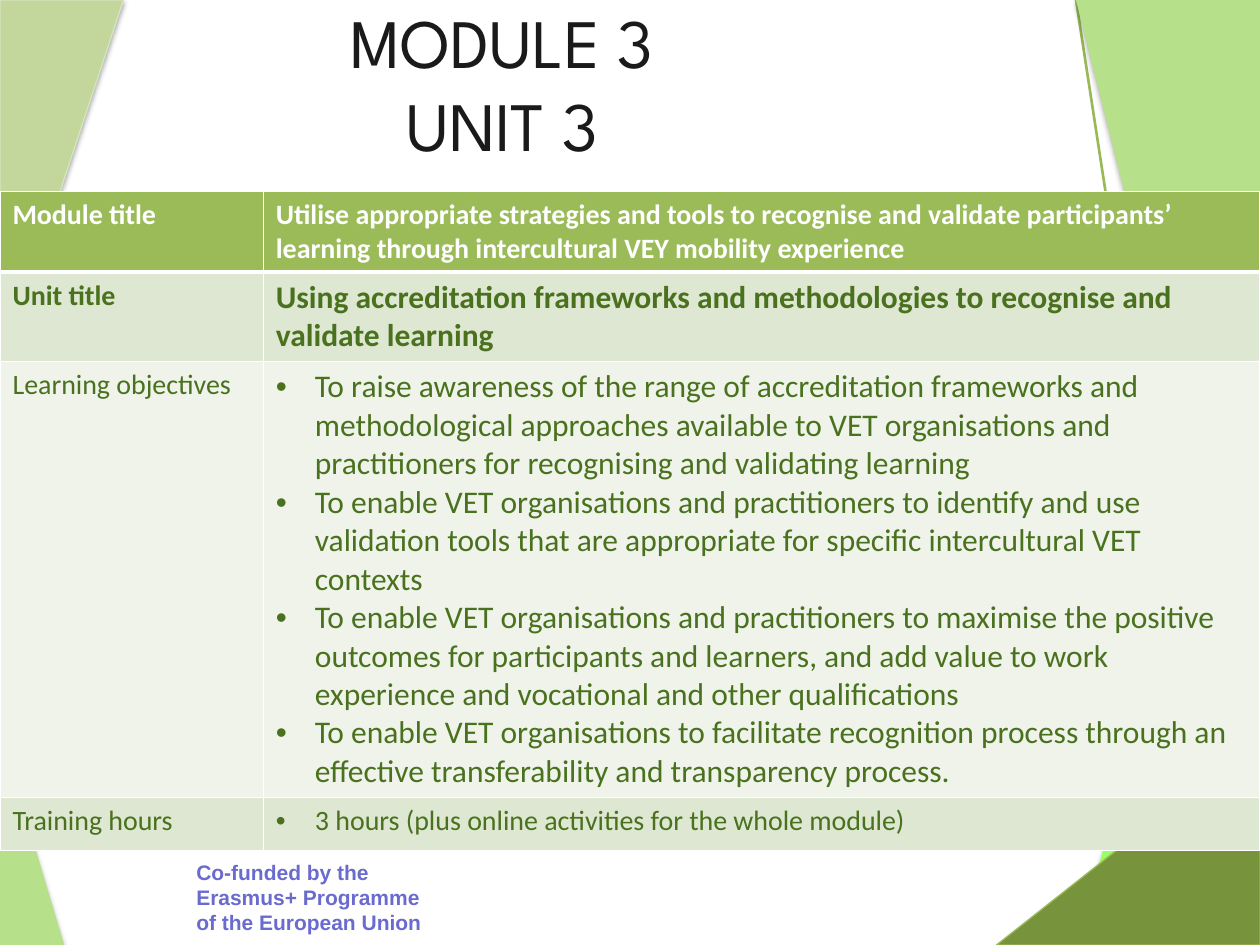
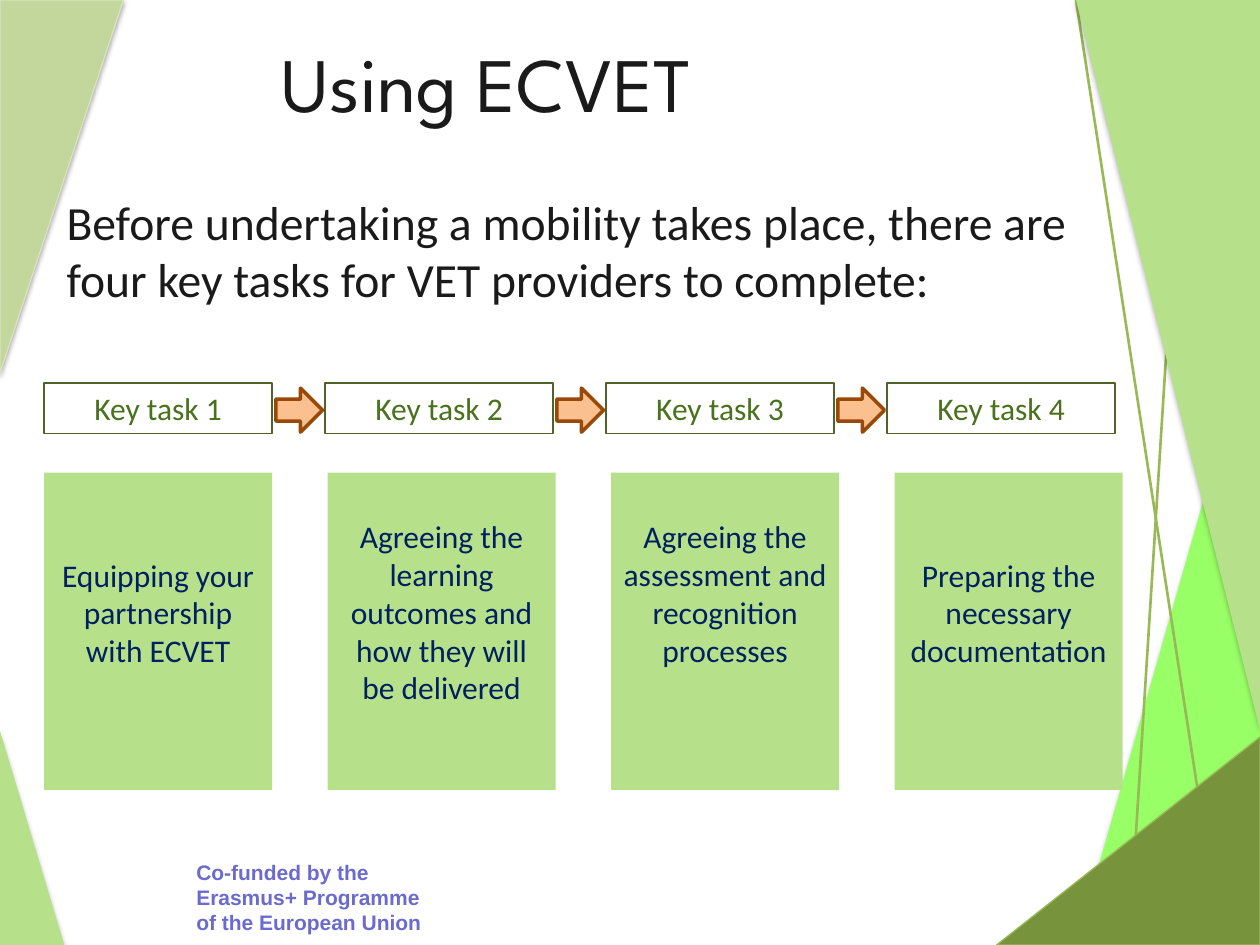
from dataclasses import dataclass

from lxml.etree import SubElement
from pptx import Presentation
from pptx.dml.color import RGBColor
from pptx.enum.shapes import MSO_CONNECTOR, MSO_SHAPE as Preset
from pptx.enum.text import MSO_ANCHOR as Anchor, PP_ALIGN as Align
from pptx.oxml.ns import qn
from pptx.util import Emu, Inches, Pt

# Slide grid: 100 columns by 75 rows
SLIDE_W, SLIDE_H = Inches(10), Inches(7.5)
COLUMN, ROW = SLIDE_W // 100, SLIDE_H // 75

# Colours
WHITE = RGBColor(0xFF, 0xFF, 0xFF)
INK = RGBColor(0x1A, 0x1A, 0x1A)
NAVY = RGBColor(0x00, 0x20, 0x60)
FOOTER_BLUE = RGBColor(0x6B, 0x6B, 0xCF)
LEAF = RGBColor(0xB7, 0xE0, 0x8B)
LIME = RGBColor(0x99, 0xFF, 0x66)
SAGE = RGBColor(0xC3, 0xD6, 0x9B)
SAGE_EDGE = RGBColor(0xD7, 0xE4, 0xBD)
OLIVE = RGBColor(0x77, 0x93, 0x3C)
STEM = RGBColor(0x98, 0xB9, 0x55)
FOREST = RGBColor(0x49, 0x71, 0x1E)
LABEL_EDGE = RGBColor(0x4F, 0x62, 0x28)
HEADER_GREEN = RGBColor(0x9B, 0xBB, 0x59)
BAND_DARK = RGBColor(0xDE, 0xE7, 0xD1)
BAND_LIGHT = RGBColor(0xEF, 0xF3, 0xEA)
PEACH = RGBColor(0xFA, 0xC0, 0x90)
RUST = RGBColor(0x98, 0x48, 0x07)


@dataclass(frozen=True)
class Area:
    """A place on the grid, in columns and rows."""
    left: float
    top: float
    width: float
    height: float

    def emu(self) -> tuple:
        return (Emu(round(self.left * COLUMN)), Emu(round(self.top * ROW)),
                Emu(round(self.width * COLUMN)), Emu(round(self.height * ROW)))


@dataclass(frozen=True)
class TextStyle:
    size: float
    color: RGBColor
    font: str = "Calibri"
    bold: bool = False
    align: Align = Align.LEFT


@dataclass(frozen=True)
class Facet:
    """A right triangle of the background."""
    area: Area
    fill: RGBColor
    edge: RGBColor | None = None
    flips: tuple = ()


@dataclass(frozen=True)
class Task:
    text: str
    lines_above: int


@dataclass(frozen=True)
class UnitRow:
    heading: str
    content: tuple
    height: float
    fill: RGBColor
    heading_style: TextStyle
    content_style: TextStyle
    bulleted: bool = False


FOOTER = TextStyle(12, FOOTER_BLUE, "Arial", True)
INTRO = TextStyle(27.2, INK)
LABEL = TextStyle(18, FOREST, align=Align.CENTER)
CARD = TextStyle(18, NAVY, align=Align.CENTER)
HEADER = TextStyle(16, WHITE, bold=True)
CELL = TextStyle(16, FOREST)
CELL_BOLD = TextStyle(16, FOREST, bold=True)
CELL_LARGE = TextStyle(18, FOREST)
CELL_LARGE_BOLD = TextStyle(18, FOREST, bold=True)

BACK_FACET = Facet(Area(85.4, 24.1, 14.6, 50.9), LIME, flips=("flipH",))
FRONT_FACETS = (
    Facet(Area(0, 58, 5.1, 17), LEAF),
    Facet(Area(0, 0, 9.8, 29.6), SAGE, SAGE_EDGE, ("flipV",)),
)
STEMS = ((89.6, 75, 93, 21), (96.5, 72.1, 85.4, 0))
TOP_FACETS = (
    Facet(Area(85.4, 0, 14.6, 57.9), LEAF, flips=("flipH", "flipV")),
    Facet(Area(79.1, 58.5, 20.9, 16.5), OLIVE, STEM, ("flipH",)),
)

UNIT_ROWS = (
    UnitRow("Module title",
            ("Utilise appropriate strategies and tools to recognise and validate "
             "participants’ learning through intercultural VEY mobility experience",),
            6.4, HEADER_GREEN, HEADER, HEADER),
    UnitRow("Unit title",
            ("Using accreditation frameworks and methodologies to recognise and "
             "validate learning",),
            7.1, BAND_DARK, CELL_BOLD, CELL_LARGE_BOLD),
    UnitRow("Learning objectives",
            ("To raise awareness of the range of accreditation frameworks and "
             "methodological approaches available to VET organisations and "
             "practitioners for recognising and validating learning",
             "To enable VET organisations and practitioners to identify and use "
             "validation tools that are appropriate for specific intercultural VET "
             "contexts",
             "To enable VET organisations and practitioners to maximise the positive "
             "outcomes for participants and learners, and add value to work "
             "experience and vocational and other qualifications",
             "To enable VET organisations to facilitate recognition process through "
             "an effective transferability and transparency process."),
            34.6, BAND_LIGHT, CELL, CELL_LARGE, True),
    UnitRow("Training hours",
            ("3 hours (plus online activities for the whole module)",),
            4.2, BAND_DARK, CELL, CELL, True),
)

TASKS = (
    Task("Equipping your partnership with ECVET", 2),
    Task("Agreeing the learning outcomes and how they will be delivered", 1),
    Task("Agreeing the assessment and recognition processes", 1),
    Task("Preparing the necessary documentation", 2),
)


# Text
def add_run(paragraph, text: str, style: TextStyle) -> None:
    paragraph.alignment = style.align
    run = paragraph.add_run()
    run.text = text
    run.font.name = style.font
    run.font.size = Pt(style.size)
    run.font.bold = style.bold
    run.font.color.rgb = style.color


def add_bullet(paragraph) -> None:
    properties = paragraph._p.get_or_add_pPr()
    properties.set("marL", str(Inches(0.31)))
    properties.set("indent", str(-Inches(0.31)))
    SubElement(properties, qn("a:buFont"), typeface="Arial")
    SubElement(properties, qn("a:buChar"), char="•")


def add_text(slide, area: Area, lines: tuple, style: TextStyle,
             anchor: Anchor = Anchor.TOP) -> None:
    frame = slide.shapes.add_textbox(*area.emu()).text_frame
    frame.word_wrap = True
    frame.vertical_anchor = anchor
    paragraph = frame.paragraphs[0]
    for number, line in enumerate(lines):
        if number:
            paragraph.add_line_break()
        add_run(paragraph, line, style)


# Shapes
def add_block(slide, preset: Preset, area: Area, fill: RGBColor | None = None,
              edge: RGBColor | None = None, edge_width: float = 0.75):
    block = slide.shapes.add_shape(preset, *area.emu())
    block.shadow.inherit = False
    if fill is None:
        block.fill.background()
    else:
        block.fill.solid()
        block.fill.fore_color.rgb = fill
    if edge is None:
        block.line.fill.background()
    else:
        block.line.color.rgb = edge
        block.line.width = Pt(edge_width)
    return block


def add_text_block(slide, area: Area, text: str, style: TextStyle,
                   fill: RGBColor | None = None, edge: RGBColor | None = None,
                   lines_above: int = 0) -> None:
    frame = add_block(slide, Preset.RECTANGLE, area, fill, edge).text_frame
    frame.word_wrap = True
    frame.vertical_anchor = Anchor.TOP
    frame.margin_top = Inches(0.05) + lines_above * Pt(style.size * 1.22)
    add_run(frame.paragraphs[0], text, style)


def add_facet(slide, facet: Facet) -> None:
    triangle = add_block(slide, Preset.RIGHT_TRIANGLE, facet.area, facet.fill, facet.edge)
    properties = triangle._element.spPr
    for flip in facet.flips:
        properties.find(qn("a:xfrm")).set(flip, "1")
    shadow = SubElement(properties.find(qn("a:effectLst")), qn("a:outerShdw"),
                        blurRad=str(Pt(3.1)), dist=str(Pt(1.8)), dir="5400000",
                        rotWithShape="0")
    SubElement(SubElement(shadow, qn("a:srgbClr"), val="000000"),
               qn("a:alpha"), val="35000")


def add_stem(slide, x1: float, y1: float, x2: float, y2: float) -> None:
    start, end = Area(x1, y1, 0, 0).emu(), Area(x2, y2, 0, 0).emu()
    stem = slide.shapes.add_connector(MSO_CONNECTOR.STRAIGHT, *start[:2], *end[:2])
    stem.line.color.rgb = STEM
    stem.line.width = Pt(1.5)
    SubElement(stem._element.spPr, qn("a:effectLst"))


# Shared background, footer and title
def start_slide(deck, title_area: Area, title: tuple, title_size: float):
    slide = deck.slides.add_slide(deck.slide_layouts[6])
    add_facet(slide, BACK_FACET)
    add_text(slide, Area(14.6, 67.7, 20, 7.1),
             ("Co-funded by the Erasmus+ Programme of the European Union",), FOOTER)
    for facet in FRONT_FACETS:
        add_facet(slide, facet)
    for stem in STEMS:
        add_stem(slide, *stem)
    for facet in TOP_FACETS:
        add_facet(slide, facet)
    add_text(slide, title_area, title,
             TextStyle(title_size, INK, "League Spartan", align=Align.CENTER),
             Anchor.MIDDLE)
    return slide


# Table of the unit
def fill_cell(cell, texts: tuple, style: TextStyle, fill: RGBColor,
              bulleted: bool, rule_below: float) -> None:
    properties = cell._tc.get_or_add_tcPr()
    for side, width in (("L", 1), ("R", 1), ("T", 1), ("B", rule_below)):
        border = SubElement(properties, qn(f"a:ln{side}"), w=str(Pt(width)))
        SubElement(SubElement(border, qn("a:solidFill")), qn("a:srgbClr"), val=str(WHITE))
    cell.fill.solid()
    cell.fill.fore_color.rgb = fill
    frame = cell.text_frame
    for number, text in enumerate(texts):
        paragraph = frame.add_paragraph() if number else frame.paragraphs[0]
        if bulleted:
            add_bullet(paragraph)
        add_run(paragraph, text, style)


def add_unit_table(slide) -> None:
    area = Area(0, 15.2, 100, sum(row.height for row in UNIT_ROWS))
    table = slide.shapes.add_table(len(UNIT_ROWS), 2, *area.emu()).table
    for column, width in zip(table.columns, (20.9, 79.1)):
        column.width = Emu(round(width * COLUMN))
    for number, row in enumerate(UNIT_ROWS):
        table.rows[number].height = Emu(round(row.height * ROW))
        rule_below = 1 if number else 3
        fill_cell(table.cell(number, 0), (row.heading,), row.heading_style,
                  row.fill, False, rule_below)
        fill_cell(table.cell(number, 1), row.content, row.content_style,
                  row.fill, row.bulleted, rule_below)


# Key tasks with their labels and arrows
def add_tasks(slide) -> None:
    left, width, label_step, card_step = 3.5, 18.1, 22.3, 22.5
    for number, task in enumerate(TASKS):
        label_left = left + number * label_step
        add_text_block(slide, Area(label_left, 30.4, width, 4), f"Key task {number + 1}",
                       LABEL, edge=LABEL_EDGE)
        add_text_block(slide, Area(left + number * card_step, 37.5, width, 25.2),
                       task.text, CARD, fill=LEAF, lines_above=task.lines_above)
        if number < len(TASKS) - 1:
            add_block(slide, Preset.RIGHT_ARROW,
                      Area(label_left + width + 0.3, 30.8, 3.7, 3.5), PEACH, RUST, 2)


def main() -> None:
    deck = Presentation()
    deck.slide_width, deck.slide_height = SLIDE_W, SLIDE_H

    unit = start_slide(deck, Area(7.5, 0.3, 64.7, 12.5), ("MODULE 3", "UNIT 3"), 39.6)
    add_unit_table(unit)

    ecvet = start_slide(deck, Area(6.3, 0.2, 64.7, 12.5), ("Using ECVET",), 44)
    add_text(ecvet, Area(4.3, 14.8, 83.6, 13),
             ("Before undertaking a mobility takes place, there are four key tasks "
              "for VET providers to complete:",), INTRO)
    add_tasks(ecvet)

    deck.save("out.pptx")


if __name__ == "__main__":
    main()
